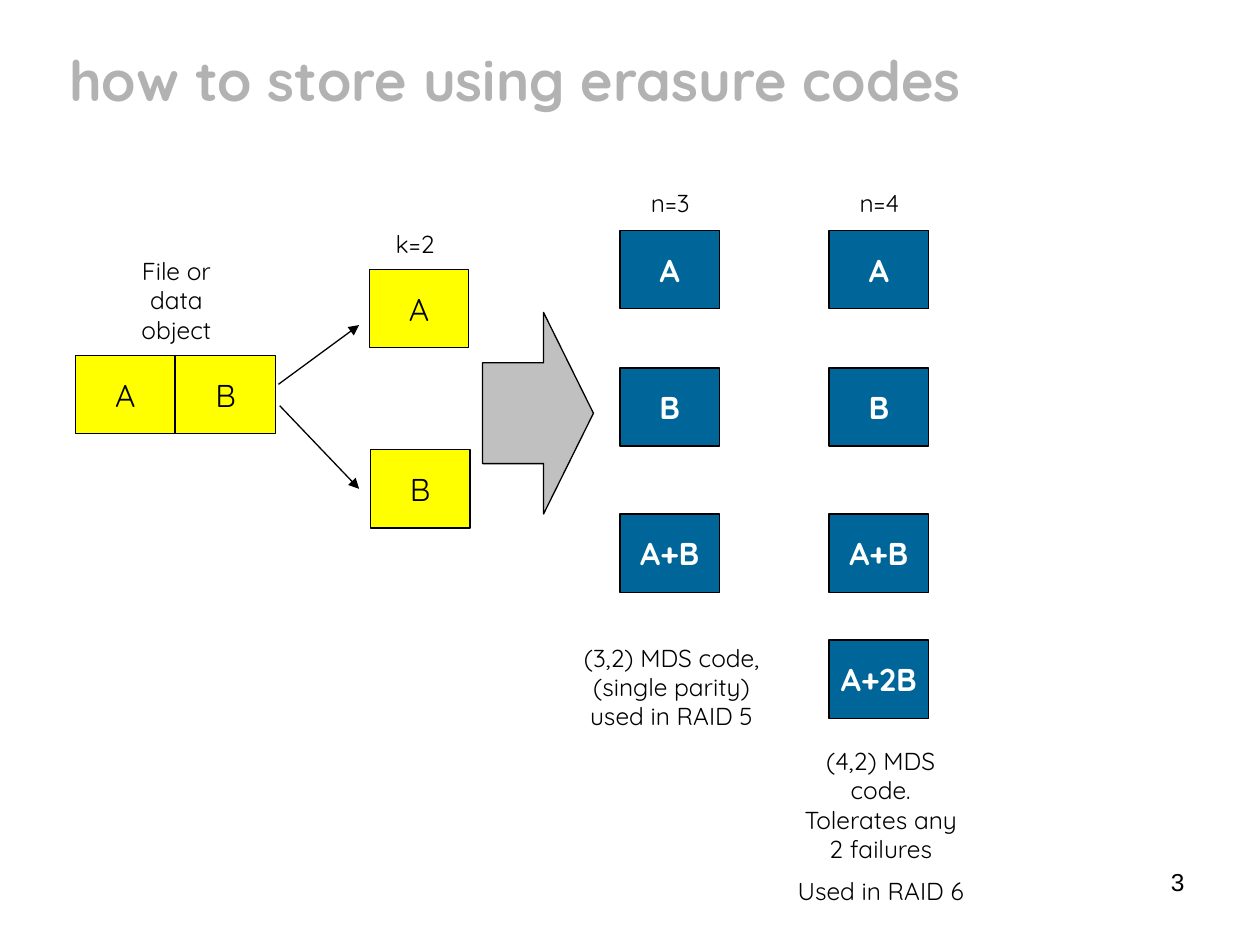
from collections import namedtuple

from pptx import Presentation
from pptx import util as u
from pptx.dml.color import RGBColor
from pptx.enum import shapes, text
from pptx.oxml.ns import qn
from lxml import etree

COLORS = {"title": "B2B2B2", "ink": "000000", "data": "FFFF00",
          "coded": "006699", "light": "FFFFFF", "arrow": "C0C0C0"}
FONT = "Quicksand"
COLUMNS, ROWS = 100, 75
CELL = u.Inches(0.1)
BLOCK_WIDTH, BLOCK_HEIGHT = 7.9, 6.2
CODED_ROWS = (0, 10.9, 22.5, 32.5)

Box = namedtuple("Box", "column row width height")


def grid(*cells):
    """Turn grid cells into slide lengths."""
    return [u.Emu(round(cell * CELL)) for cell in cells]


def color(name):
    """Look up a colour by its role."""
    return RGBColor.from_string(COLORS[name])


def write(frame, paragraphs, size, ink="ink", bold=False, font=FONT,
          align=text.PP_ALIGN.CENTER):
    """Fill a text frame with equally styled paragraphs."""
    for index, words in enumerate(paragraphs):
        paragraph = frame.add_paragraph() if index else frame.paragraphs[0]
        paragraph.text = words
        paragraph.alignment = align
        paragraph.font.name = font
        paragraph.font.size = u.Pt(size)
        paragraph.font.bold = bold
        paragraph.font.color.rgb = color(ink)
        if index:
            paragraph.space_before = u.Pt(size / 2)


def add_text(slide, box, *paragraphs, size=14, anchor=text.MSO_ANCHOR.TOP, **style):
    """Place a wrapping text box."""
    frame = slide.shapes.add_textbox(*grid(*box)).text_frame
    frame.word_wrap = True
    frame.vertical_anchor = anchor
    write(frame, paragraphs, size, **style)


def add_outlined(slide, kind, box, fill):
    """Place a filled preset shape with a thin black outline."""
    shape = slide.shapes.add_shape(kind, *grid(*box))
    shape.shadow.inherit = False
    shape.fill.solid()
    shape.fill.fore_color.rgb = color(fill)
    shape.line.color.rgb = color("ink")
    shape.line.width = u.Pt(0.75)
    return shape


def add_block(slide, column, row, words, fill="data", ink="ink", bold=False):
    """Place one storage block with its name."""
    box = Box(column, row, BLOCK_WIDTH, BLOCK_HEIGHT)
    frame = add_outlined(slide, shapes.MSO_SHAPE.RECTANGLE, box, fill).text_frame
    frame.word_wrap = False
    frame.vertical_anchor = text.MSO_ANCHOR.MIDDLE
    write(frame, [words], 18, ink, bold)


def add_arrow(slide, *ends):
    """Draw a thin line with an arrowhead at its end."""
    connector = slide.shapes.add_connector(
        shapes.MSO_CONNECTOR.STRAIGHT, *grid(*ends))
    connector.line.color.rgb = color("ink")
    connector.line.width = u.Pt(0.75)
    etree.SubElement(connector.line._get_or_add_ln(), qn("a:tailEnd"), type="triangle")
    etree.SubElement(connector._element.spPr, qn("a:effectLst"))


def add_header(slide, box):
    """Place the slide title."""
    add_text(slide, box, "how to store using erasure codes", size=32,
             ink="title", bold=True, align=text.PP_ALIGN.LEFT,
             anchor=text.MSO_ANCHOR.MIDDLE)


def add_data_object(slide, box):
    """Place the file, its two halves and the arrows that split it."""
    add_text(slide, Box(box.column + 2.4, box.row, 11.2, 8.1), "File or data object")
    top = box.row + box.height - BLOCK_HEIGHT
    for index, name in enumerate("AB"):
        add_block(slide, box.column + index * box.width / 2, top, name)
    right = box.column + box.width
    add_arrow(slide, right + 0.2, top + 2.3, right + 6.6, top - 2.4)
    add_arrow(slide, right + 0.3, top + 4, right + 6.6, top + 10.6)


def add_fragments(slide, box):
    """Place the k data blocks and the large arrow to the coded blocks."""
    add_text(slide, Box(box.column - 3.5, box.row, 14.3, 3.4), "k=2")
    add_block(slide, box.column, box.row + 3.7, "A")
    add_block(slide, box.column + 0.1, box.row + box.height - BLOCK_HEIGHT, "B")
    arrow = add_outlined(slide, shapes.MSO_SHAPE.RIGHT_ARROW,
                         Box(box.column + 9, box.row + 7.1, 8.8, 16), "arrow")
    arrow.adjustments[0], arrow.adjustments[1] = 0.5, 0.45


def add_code(slide, box, heading, names, caption_box, *caption):
    """Place a column of coded blocks under a heading, with its caption."""
    add_text(slide, Box(box.column - 3.15, box.row, 14.3, 3.4), heading)
    for name, offset in zip(names, CODED_ROWS):
        add_block(slide, box.column, box.row + 3.9 + offset, name,
                  "coded", "light", True)
    add_text(slide, caption_box, *caption)


def add_footer(slide, box):
    """Place the slide number."""
    add_text(slide, box, "3", font="Arial", align=text.PP_ALIGN.RIGHT)


def main():
    """Build and save the slide."""
    presentation = Presentation()
    presentation.slide_width, presentation.slide_height = grid(COLUMNS, ROWS)
    slide = presentation.slides.add_slide(presentation.slide_layouts[6])
    add_header(slide, Box(4.5, 0, 92.9, 12.5))
    add_data_object(slide, Box(6, 19.8, 15.9, 14.6))
    add_fragments(slide, Box(29.3, 17.7, 8, 24.2))
    add_code(slide, Box(49.2, 14.4, 7.9, 32.6), "n=3", ("A", "B", "A+B"),
             Box(44.2, 50.5, 18.2, 8.1),
             "(3,2) MDS code, (single parity) used in RAID 5")
    add_code(slide, Box(65.8, 14.4, 7.9, 42.6), "n=4", ("A", "B", "A+B", "A+2B"),
             Box(62.2, 58.7, 15.4, 11.6),
             "(4,2) MDS code. Tolerates any 2 failures", "Used in RAID 6")
    add_footer(slide, Box(71.7, 68.3, 23.3, 5.2))
    presentation.save("out.pptx")


if __name__ == "__main__":
    main()
